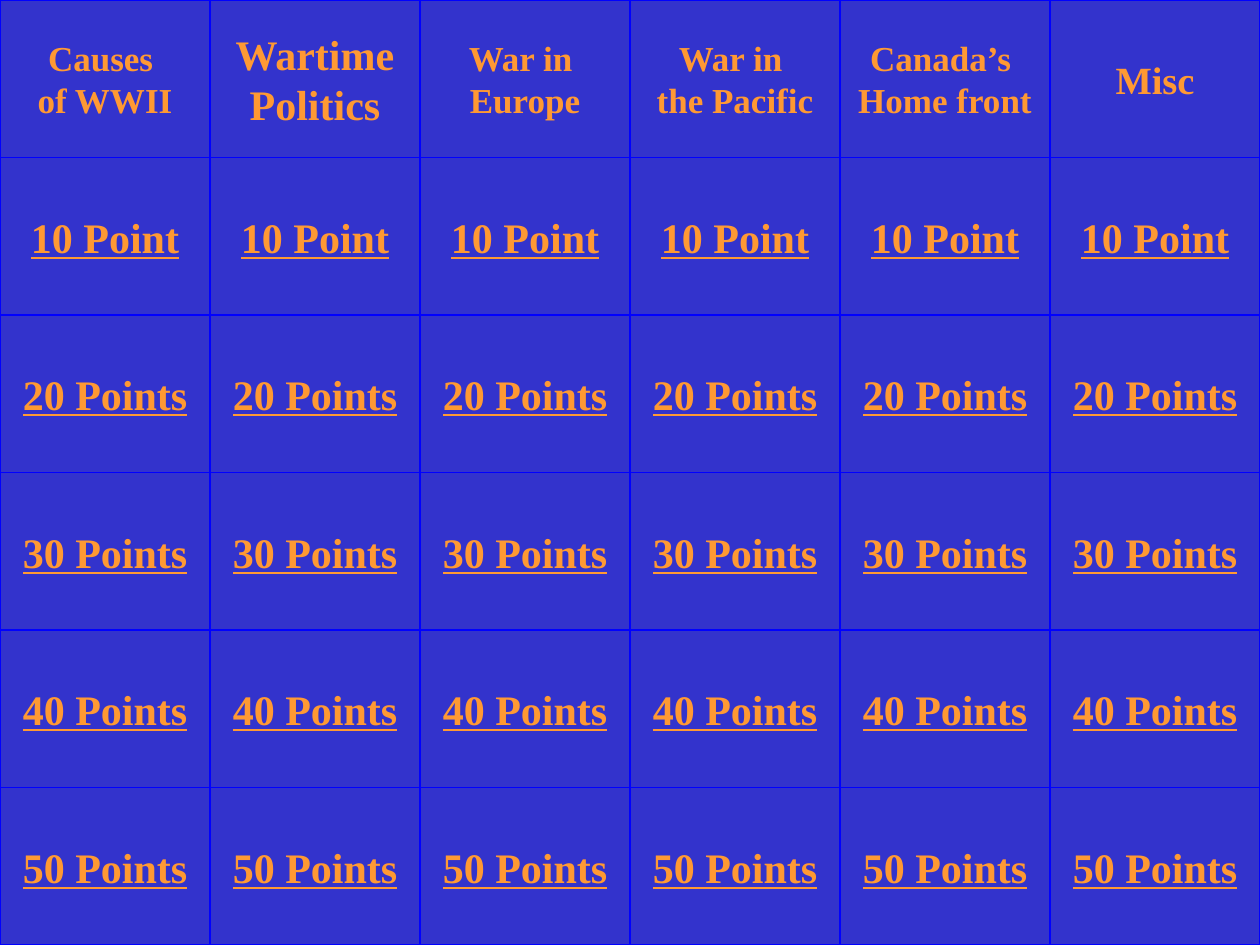
from pptx import Presentation
from pptx.dml.color import RGBColor
from pptx.enum import shapes, text
from pptx.util import Inches, Pt

HEADS = [
    (["Causes ", "of WWII"], 20),
    (["Wartime", "Politics"], 24),
    (["War in ", "Europe"], 20),
    (["War in ", "the Pacific"], 20),
    (["Canada’s ", "Home front"], 20),
    (["Misc"], 22),
]
SCORES = ["10 Point", "20 Points", "30 Points", "40 Points", "50 Points"]
BLUE, EDGE, GOLD = "3333CC", "0000FF", "FF9933"
FONT = {"name": "Times New Roman", "bold": True}
FRAME = {"word_wrap": False, "vertical_anchor": text.MSO_ANCHOR.MIDDLE}


def paint(item, tint):
    item.solid()
    item.fore_color.rgb = RGBColor.from_string(tint)


def style(item, looks):
    for key, value in looks.items():
        setattr(item, key, value)


def button(slide, box, lines, looks):
    tile = slide.shapes.add_shape(shapes.MSO_SHAPE.ACTION_BUTTON_CUSTOM, *box)
    tile.shadow.inherit = False
    paint(tile.fill, BLUE)
    paint(tile.line.fill, EDGE)
    tile.line.width = Pt(0.75)
    frame = tile.text_frame
    style(frame, FRAME)
    frame.text = "\n".join(lines)
    for para in frame.paragraphs:
        para.alignment = text.PP_ALIGN.CENTER
        for run in para.runs:
            style(run.font, FONT | looks)
            paint(run.font.fill, GOLD)


def main():
    deck = Presentation()
    deck.slide_width, deck.slide_height = Inches(10), Inches(7.5)
    slide = deck.slides.add_slide(deck.slide_layouts[6])
    paint(slide.background.fill, BLUE)
    wide = deck.slide_width // len(HEADS)
    high = deck.slide_height // (len(SCORES) + 1)
    for col, (lines, size) in enumerate(HEADS):
        cells = [(lines, {"size": Pt(size)})]
        cells += [([score], {"size": Pt(24), "underline": True}) for score in SCORES]
        for row, (words, looks) in enumerate(cells):
            button(slide, (col * wide, row * high, wide, high), words, looks)
    deck.save("out.pptx")


if __name__ == "__main__":
    main()
